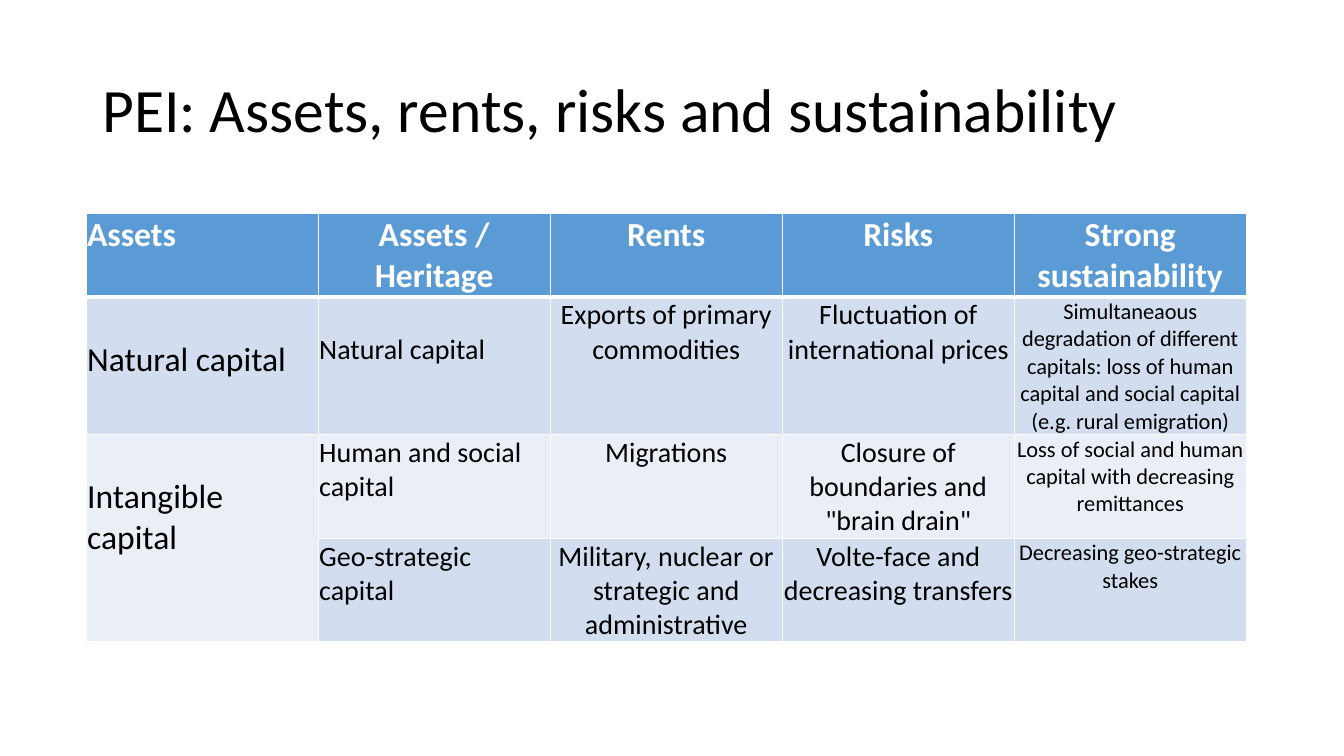
from lxml.etree import SubElement as Sub
from pptx import Presentation
from pptx.dml.color import RGBColor as RGB
from pptx.enum.text import MSO_ANCHOR as ANCHOR, PP_ALIGN as ALIGN
from pptx.oxml.ns import qn
from pptx.util import Pt

PX = 9525
FONT = "Calibri"
COLORS = {"text": "000000", "white": "FFFFFF", "header": "5B9BD5",
          "band": "D2DEEF", "light": "EAEFF7"}
HEADERS = ["Assets", "Assets / Heritage", "Rents", "Risks", "Strong sustainability"]
BODY = [
    ["Natural capital", "Natural capital", "Exports of primary commodities",
     "Fluctuation of international prices",
     "Simultaneaous degradation of different capitals: loss of human capital "
     "and social capital (e.g. rural emigration)"],
    ["Intangible capital", "Human and social capital", "Migrations",
     "Closure of boundaries and \"brain drain\"",
     "Loss of social and human capital with decreasing remittances"],
    ["", "Geo-strategic capital", "Military, nuclear or strategic and administrative",
     "Volte-face and decreasing transfers", "Decreasing geo-strategic stakes"],
]
BODY_SIZES = [24, 20, 20, 20, 16]
BODY_FILLS = ["band", "light", "band"]
TOP_INSETS = {(1, 0): 40, (1, 1): 34, (2, 0): 40}
COL_WIDTH = 221
ROW_HEIGHTS = [80, 131, 99, 98]


def px(n):
    return n * PX


def add_run(p, text, size, color, bold=False):
    r = p.add_run()
    r.text = text
    r.font.name = FONT
    r.font.size = Pt(size)
    r.font.bold = bold
    r.font.color.rgb = RGB.from_string(COLORS[color])


def add_title(s, text):
    tf = s.shapes.add_textbox(px(88), px(38), px(1104), px(139)).text_frame
    tf.word_wrap = True
    tf.vertical_anchor = ANCHOR.MIDDLE
    p = tf.paragraphs[0]
    p.line_spacing = 0.9
    add_run(p, text, 44, "text")


def set_borders(cell, top, bottom):
    tc_pr = cell._tc.get_or_add_tcPr()
    for side, width in (("L", 1), ("R", 1), ("T", top), ("B", bottom)):
        ln = Sub(tc_pr, qn(f"a:ln{side}"), w=str(Pt(width)))
        Sub(Sub(ln, qn("a:solidFill")), qn("a:srgbClr"), val=COLORS["white"])


def style_cell(cell, row, fill):
    set_borders(cell, 3 if row == 1 else 1, 3 if row == 0 else 1)
    cell.fill.solid()
    cell.fill.fore_color.rgb = RGB.from_string(COLORS[fill])
    cell.margin_left = cell.margin_right = cell.margin_top = px(1)
    cell.margin_bottom = 0


def write_cell(cell, text, size, color, bold, centred):
    p = cell.text_frame.paragraphs[0]
    p.alignment = ALIGN.CENTER if centred else ALIGN.LEFT
    add_run(p, text, size, color, bold)


def add_capital_table(s):
    rows = [HEADERS] + BODY
    table = s.shapes.add_table(len(rows), len(HEADERS), px(82), px(203),
                               px(COL_WIDTH * len(HEADERS)), px(sum(ROW_HEIGHTS))).table
    for col in table.columns:
        col.width = px(COL_WIDTH)
    for i, texts in enumerate(rows):
        table.rows[i].height = px(ROW_HEIGHTS[i])
        head = i == 0
        for j, text in enumerate(texts):
            cell = table.cell(i, j)
            style_cell(cell, i, "header" if head else BODY_FILLS[i - 1])
            cell.margin_top = px(TOP_INSETS.get((i, j), 1))
            if text:
                write_cell(cell, text, 24 if head else BODY_SIZES[j],
                           "white" if head else "text", head, j > (0 if head else 1))
    table.cell(2, 0).merge(table.cell(3, 0))


def main():
    prs = Presentation()
    prs.slide_width, prs.slide_height = px(1280), px(720)
    s = prs.slides.add_slide(prs.slide_layouts[6])
    add_title(s, "PEI: Assets, rents, risks and sustainability")
    add_capital_table(s)
    prs.save("out.pptx")


if __name__ == "__main__":
    main()
